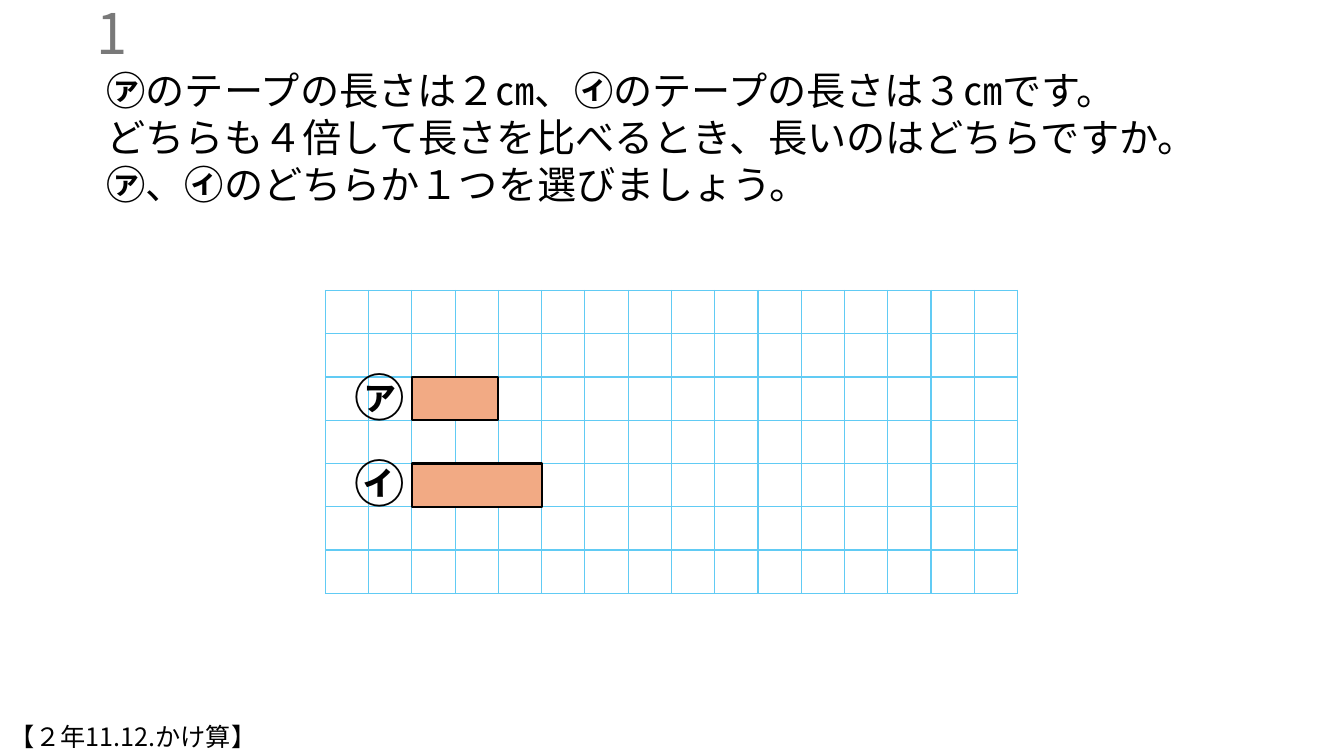
from dataclasses import dataclass

from lxml.etree import SubElement
from pptx import Presentation
from pptx.dml.color import RGBColor
from pptx.enum.shapes import MSO_SHAPE
from pptx.enum.text import MSO_ANCHOR, MSO_AUTO_SIZE, PP_ALIGN
from pptx.oxml.ns import qn
from pptx.util import Cm, Pt

NUMBER = "1"
QUESTION = [
    ["㋐", "のテープの長さは２㎝、", "㋑", "のテープの長さは３㎝です。"],
    ["どちらも４倍して長さを比べるとき、長いのはどちらですか。"],
    ["㋐", "、", "㋑", "のどちらか１つを選びましょう。"],
]
TAPES = [("㋐", 2, 2), ("㋑", 3, 4)]
UNIT_NAME = "【２年11.12.かけ算】"

COLS, ROWS, UNIT = 16, 7, 1.09
GRID_X, GRID_Y = 8.2, 7.32
TAPE_COL = 2


@dataclass(frozen=True)
class Theme:
    font: str = "Noto Sans CJK JP"
    ink: str = "000000"
    gray: str = "797979"
    grid: str = "61CBF4"
    tape: str = "F2AA84"
    number: int = 40
    label: int = 36
    question: int = 28
    footer: int = 18


T = Theme()


def write(sp, lines, size, color=T.ink, align=PP_ALIGN.LEFT, anchor=MSO_ANCHOR.TOP):
    tf = sp.text_frame
    tf.word_wrap = True
    tf.auto_size = MSO_AUTO_SIZE.NONE
    tf.vertical_anchor = anchor
    for i, line in enumerate(lines):
        p = tf.add_paragraph() if i else tf.paragraphs[0]
        p.alignment = align
        p.line_spacing = Pt(size * 1.2)
        for text in line:
            r = p.add_run()
            r.text = text
            r.font.size = Pt(size)
            r.font.name = T.font
            r.font.bold = text in ("㋐", "㋑")
            r.font.color.rgb = RGBColor.from_string(color)
            SubElement(r.font._element, qn("a:ea"), typeface=T.font)


def add_text(s, x, y, w, h, lines, size):
    write(s.shapes.add_textbox(Cm(x), Cm(y), Cm(w), Cm(h)), lines, size)


def format_cell(cell):
    cell.margin_left = cell.margin_right = cell.margin_top = cell.margin_bottom = 0
    tc_pr = cell._tc.get_or_add_tcPr()
    for side in ("lnL", "lnR", "lnT", "lnB"):
        ln = SubElement(tc_pr, qn(f"a:{side}"), w=str(Pt(1)))
        fill = SubElement(ln, qn("a:solidFill"))
        SubElement(fill, qn("a:srgbClr"), val=T.grid)
    cell.fill.background()


def add_grid(s):
    table = s.shapes.add_table(ROWS, COLS, Cm(GRID_X), Cm(GRID_Y),
                               Cm(COLS * UNIT), Cm(ROWS * UNIT)).table
    table.first_row = table.horz_banding = False
    for line in table.columns:
        line.width = Cm(UNIT)
    for line in table.rows:
        line.height = Cm(UNIT)
    for cell in table.iter_cells():
        format_cell(cell)


def add_tape(s, label, length, row):
    x, y = GRID_X + TAPE_COL * UNIT, GRID_Y + row * UNIT
    sp = s.shapes.add_shape(MSO_SHAPE.RECTANGLE, Cm(x), Cm(y),
                            Cm(length * UNIT), Cm(UNIT))
    sp.shadow.inherit = False
    sp.fill.solid()
    sp.fill.fore_color.rgb = RGBColor.from_string(T.tape)
    sp.line.color.rgb = RGBColor.from_string(T.ink)
    sp.line.width = Pt(1.5)
    add_text(s, x - 1.7, y - 0.41, 1.63, 1.8, [[label]], T.label)


def main():
    prs = Presentation()
    prs.slide_width, prs.slide_height = Cm(33.87), Cm(19.05)
    s = prs.slides.add_slide(prs.slide_layouts[5])
    title = s.shapes.title
    title.left, title.top, title.width, title.height = Cm(-4.14), Cm(0.3), Cm(7.62), Cm(1.02)
    write(title, [[NUMBER]], T.number, T.gray, PP_ALIGN.RIGHT, MSO_ANCHOR.MIDDLE)
    add_text(s, 2.44, 1.54, 31.12, 3.84, QUESTION, T.question)
    add_grid(s)
    for tape in TAPES:
        add_tape(s, *tape)
    add_text(s, 0, 18.05, 19.02, 1, [[UNIT_NAME]], T.footer)
    prs.save("out.pptx")


if __name__ == "__main__":
    main()
